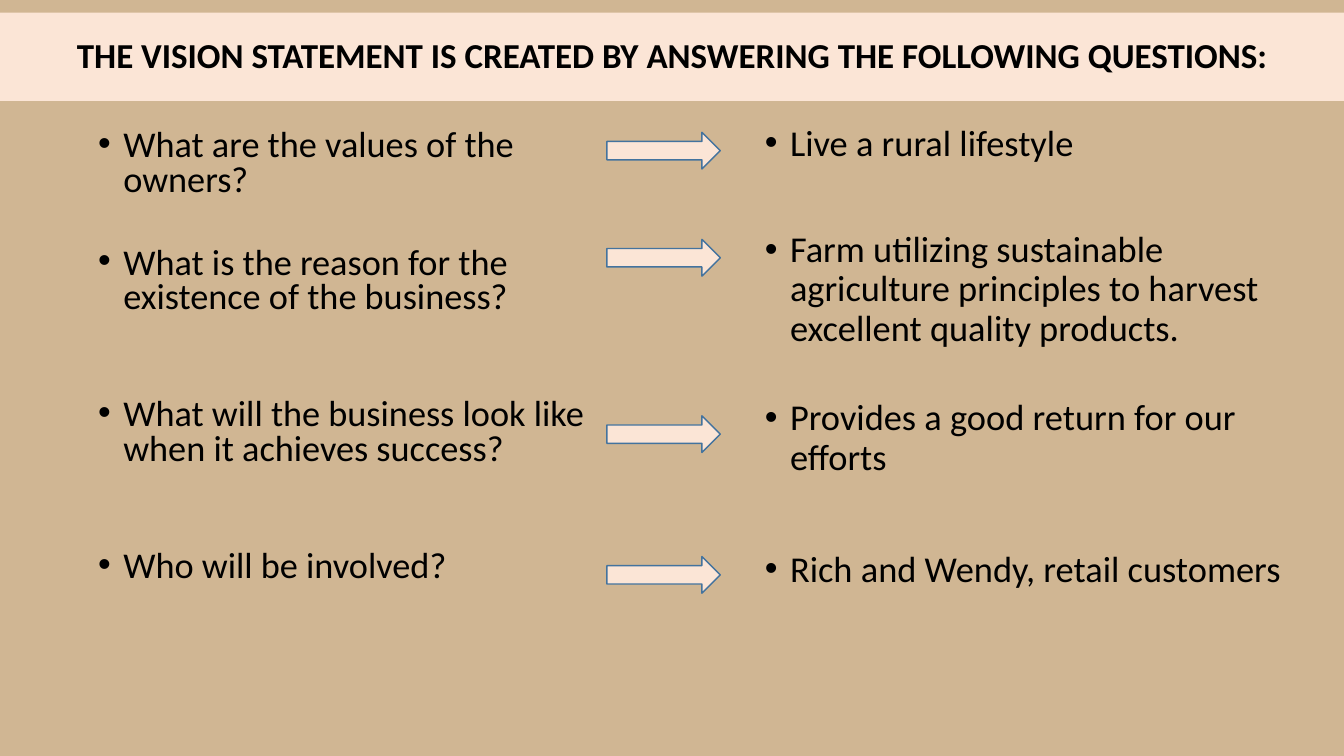
from lxml import etree
from pptx import Presentation
from pptx import util as u
from pptx.dml.color import RGBColor
from pptx.enum import shapes, text
from pptx.oxml.ns import qn

PX = 9525  # EMU in one px, 96 px to the inch
SAND, PEACH, BLUE, BLACK = "D0B693", "FBE5D6", "43739E", "000000"
BULLET_INDENT = 24
ARROW_LEFT, ARROW_WIDTH, ARROW_HEIGHT = 578, 108, 35
ARROW_TOPS = (126, 228, 396, 530)

TITLE = "THE VISION STATEMENT IS CREATED BY ANSWERING THE FOLLOWING QUESTIONS:"
# Each entry: space before in points, wording
QUESTIONS = (
    (10, "What are the values of the owners?"),
    (34, "What is the reason for the existence of the business?"),
    (58.5, "What will the business look like when it achieves success?"),
    (58.5, "Who will be involved?"),
)
ANSWERS = (
    (10, "Live a rural lifestyle"),
    (48, "Farm utilizing sustainable agriculture principles to harvest "
         "excellent quality products."),
    (36, "Provides a good return for our efforts"),
    (52, "Rich and Wendy, retail customers"),
)


def px(*lengths):
    return [u.Emu(length * PX) for length in lengths]


def color(hex_string):
    return RGBColor.from_string(hex_string)


def fill(target, hex_string):
    target.fill.solid()
    target.fill.fore_color.rgb = color(hex_string)


def set_format(target, values):
    for name, value in values.items():
        setattr(target, name, value)


def set_font(paragraph, size, bold=False):
    set_format(paragraph.font,
               {"name": "Calibri", "size": u.Pt(size), "bold": bold})
    paragraph.font.color.rgb = color(BLACK)


def add_bullet(paragraph):
    props = paragraph._p.get_or_add_pPr()
    indent = BULLET_INDENT * PX
    props.set("marL", str(indent))
    props.set("indent", str(-indent))
    etree.SubElement(props, qn("a:buFont"), typeface="Arial")
    etree.SubElement(props, qn("a:buChar"), char="•")


def format_title(title):
    left, top, width, height = px(0, 12, 1280, 84)
    set_format(title, {"left": left, "top": top,
                       "width": width, "height": height})
    fill(title, PEACH)
    frame = title.text_frame
    frame.text = TITLE
    set_format(frame, {"word_wrap": True,
                       "auto_size": text.MSO_AUTO_SIZE.NONE,
                       "vertical_anchor": text.MSO_ANCHOR.MIDDLE})
    heading = frame.paragraphs[0]
    set_format(heading, {"alignment": text.PP_ALIGN.CENTER,
                         "line_spacing": 0.9})
    set_font(heading, 25, bold=True)


def add_bullet_column(slide, box, entries, size, line_spacing):
    frame = slide.shapes.add_textbox(*px(*box)).text_frame
    frame.word_wrap = True
    for index, (gap, wording) in enumerate(entries):
        entry = frame.add_paragraph() if index else frame.paragraphs[0]
        entry.text = wording
        set_format(entry, {"space_before": u.Pt(gap),
                           "line_spacing": line_spacing})
        set_font(entry, size)
        add_bullet(entry)


def add_arrow(slide, top):
    arrow = slide.shapes.add_shape(
        shapes.MSO_SHAPE.RIGHT_ARROW,
        *px(ARROW_LEFT, top, ARROW_WIDTH, ARROW_HEIGHT))
    arrow.shadow.inherit = False
    fill(arrow, PEACH)
    arrow.line.color.rgb = color(BLUE)
    arrow.line.width = u.Pt(1)


def main():
    deck = Presentation()
    deck.slide_width, deck.slide_height = px(1280, 720)
    slide = deck.slides.add_slide(deck.slide_layouts[5])
    fill(slide.background, SAND)
    format_title(slide.shapes.title)
    add_bullet_column(slide, (84, 119, 494, 461), QUESTIONS, 25.9, 0.8)
    add_bullet_column(slide, (719, 114, 529, 466), ANSWERS, 26, 0.9)
    for top in ARROW_TOPS:
        add_arrow(slide, top)
    deck.save("out.pptx")


if __name__ == "__main__":
    main()
